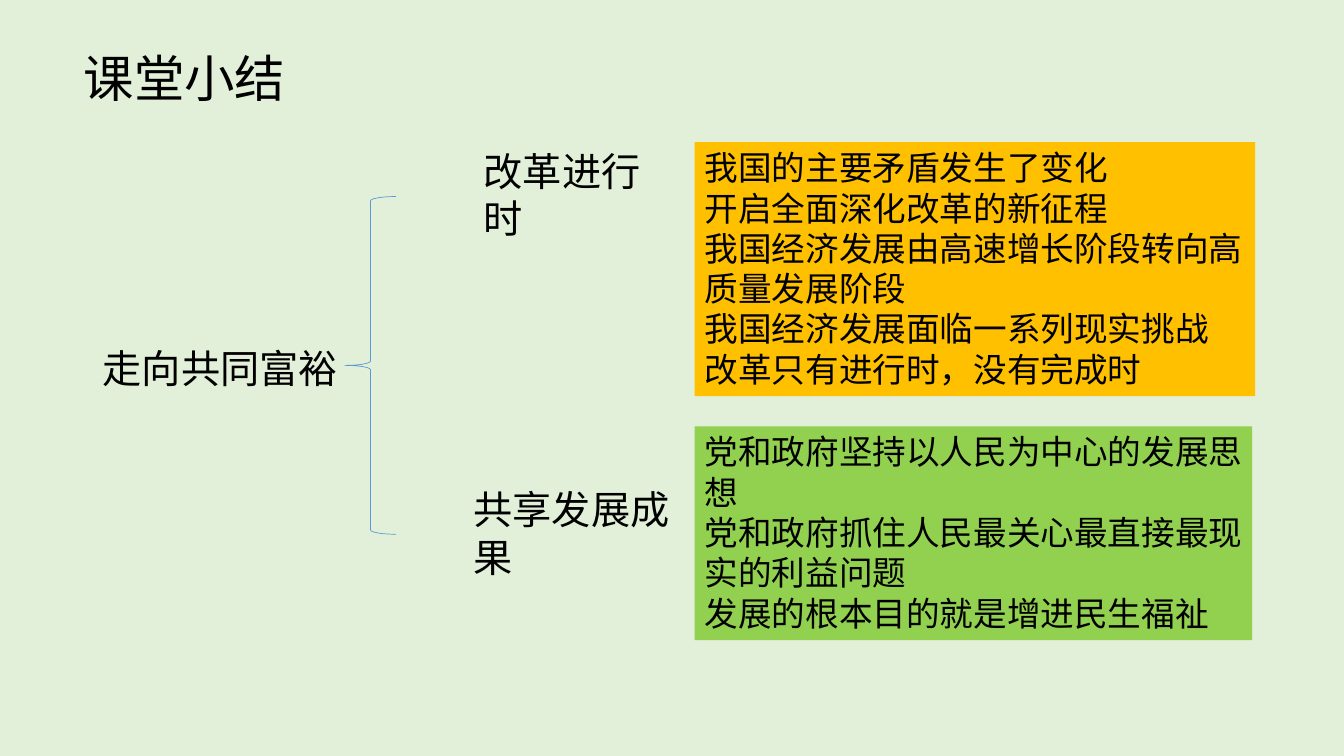
import dataclasses

import lxml.etree
import pptx
import pptx.dml.color
import pptx.enum.shapes
import pptx.enum.text
import pptx.oxml.ns
import pptx.util

Inches = pptx.util.Inches
Anchor = pptx.enum.text.MSO_ANCHOR
Shape = pptx.enum.shapes.MSO_SHAPE


@dataclasses.dataclass(frozen=True)
class Theme:
    background: str = "E2F0D9"
    text: str = "000000"
    brace: str = "5B9BD5"
    reform: str = "FFC000"
    sharing: str = "92D050"
    font: str = "Calibri"
    title_size: int = 36
    topic_size: int = 28
    detail_size: int = 24
    brace_width: float = 0.5


THEME = Theme()


def rgb(value):
    return pptx.dml.color.RGBColor.from_string(value)


def apply_format(target, values):
    for name, value in values.items():
        setattr(target, name, value)


def place(element, bounds):
    names = ("left", "top", "width", "height")
    apply_format(element, dict(zip(names, map(Inches, bounds))))


def write(element, lines, size, frame_format=None, paragraph_format=None, plain_list=False):
    frame = element.text_frame
    apply_format(frame, {
        "word_wrap": True,
        "auto_size": pptx.enum.text.MSO_AUTO_SIZE.NONE,
        "vertical_anchor": Anchor.TOP,
        **(frame_format or {}),
    })
    frame.text = "\n".join(lines)
    for paragraph in frame.paragraphs:
        if plain_list:
            properties = paragraph._p.get_or_add_pPr()
            properties.set("marL", "0")
            properties.set("indent", "0")
            lxml.etree.SubElement(properties, pptx.oxml.ns.qn("a:buNone"))
        apply_format(paragraph, {
            "alignment": pptx.enum.text.PP_ALIGN.LEFT,
            "space_before": pptx.util.Pt(0),
            **(paragraph_format or {}),
        })
        for run in paragraph.runs:
            apply_format(run.font, {"name": THEME.font, "size": pptx.util.Pt(size)})
            run.font.color.rgb = rgb(THEME.text)


def add_brace(slide, bounds):
    brace = slide.shapes.add_shape(Shape.LEFT_BRACE, *map(Inches, bounds))
    brace.shadow.inherit = False
    brace.fill.background()
    brace.line.color.rgb = rgb(THEME.brace)
    brace.line.width = pptx.util.Pt(THEME.brace_width)


def add_topic(slide, bounds, topic):
    label = slide.shapes.add_textbox(*map(Inches, bounds))
    write(label, [topic], THEME.topic_size)


def add_detail_panel(slide, bounds, colour, points):
    panel = slide.shapes.add_shape(Shape.RECTANGLE, *map(Inches, bounds))
    panel.shadow.inherit = False
    panel.fill.solid()
    panel.fill.fore_color.rgb = rgb(colour)
    panel.line.fill.background()
    write(panel, points, THEME.detail_size)


def main():
    deck = pptx.Presentation()
    apply_format(deck, {"slide_width": Inches(13.33), "slide_height": Inches(7.5)})
    slide = deck.slides.add_slide(deck.slide_layouts[1])
    slide.background.fill.solid()
    slide.background.fill.fore_color.rgb = rgb(THEME.background)

    heading = slide.shapes.title
    place(heading, (0.73, 0.42, 2.8, 0.71))
    write(heading, ["课堂小结"], THEME.title_size)

    theme_topic = slide.placeholders[1]
    place(theme_topic, (0.92, 3.33, 2.5, 0.7))
    write(
        theme_topic, ["走向共同富裕"], THEME.topic_size,
        {"vertical_anchor": Anchor.MIDDLE, "margin_right": 0},
        {"line_spacing": 0.9}, plain_list=True,
    )

    add_brace(slide, (3.42, 1.95, 0.51, 3.35))
    add_topic(slide, (4.7, 1.41, 1.95, 1.04), "改革进行时")
    add_topic(slide, (4.6, 4.77, 2.46, 1.04), "共享发展成果")
    add_detail_panel(slide, (6.89, 1.41, 5.56, 2.52), THEME.reform, [
        "我国的主要矛盾发生了变化",
        "开启全面深化改革的新征程",
        "我国经济发展由高速增长阶段转向高质量发展阶段",
        "我国经济发展面临一系列现实挑战",
        "改革只有进行时，没有完成时",
    ])
    add_detail_panel(slide, (6.89, 4.23, 5.53, 2.12), THEME.sharing, [
        "党和政府坚持以人民为中心的发展思想",
        "党和政府抓住人民最关心最直接最现实的利益问题",
        "发展的根本目的就是增进民生福祉",
    ])
    deck.save("out.pptx")


if __name__ == "__main__":
    main()
